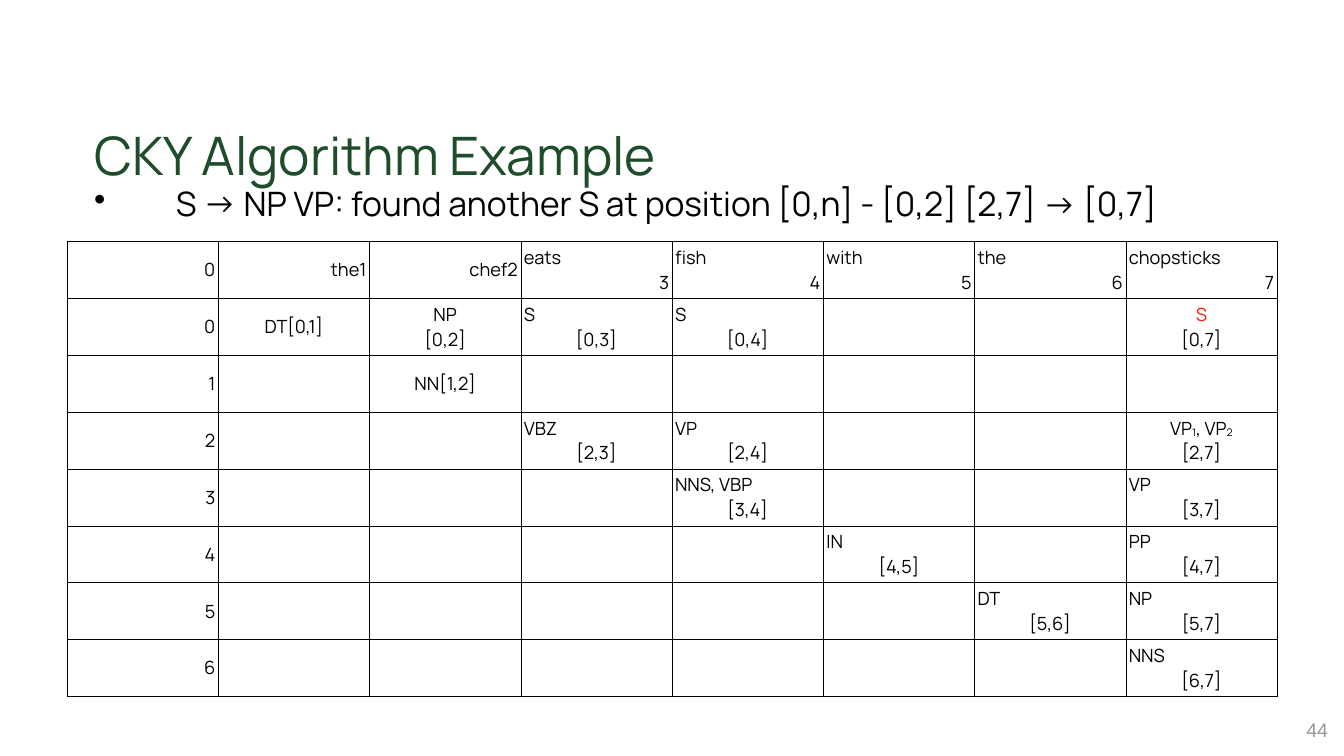
import pptx
import pptx.dml.color
import pptx.enum.text
import pptx.oxml
import pptx.oxml.ns
import pptx.util

Cm = pptx.util.Cm
Pt = pptx.util.Pt
ANCHOR = pptx.enum.text.MSO_ANCHOR
LEFT = pptx.enum.text.PP_ALIGN.LEFT
CENTER = pptx.enum.text.PP_ALIGN.CENTER
RIGHT = pptx.enum.text.PP_ALIGN.RIGHT

BLACK, GREEN, RED, GRAY = "000000", "1E4D2B", "EE230C", "99999A"
SUBSCRIPTS = {"₁": "1", "₂": "2"}

HEADERS = ["0", "the1", "chef2", "eats\n3", "fish\n4", "with\n5", "the\n6", "chopsticks\n7"]
# Symbols found for each span: (start, end) -> label
CHART = {
    (0, 1): "DT", (0, 2): "NP", (0, 3): "S", (0, 4): "S", (0, 7): "S",
    (1, 2): "NN",
    (2, 3): "VBZ", (2, 4): "VP", (2, 7): "VP₁, VP₂",
    (3, 4): "NNS, VBP", (3, 7): "VP",
    (4, 5): "IN", (4, 7): "PP",
    (5, 6): "DT", (5, 7): "NP",
    (6, 7): "NNS",
}
ONE_LINE = {(0, 1), (1, 2)}
CENTERED = {(0, 2), (0, 7), (2, 7)}
NEW_SPAN = (0, 7)


def rgb(value):
    return pptx.dml.color.RGBColor.from_string(value)


def write(para, text, size=26, color=BLACK, font="Manrope", align=LEFT):
    """Fill a paragraph, setting the subscript digits as lowered spans."""
    para.alignment = align
    pieces = [""]
    for letter in text:
        if letter in SUBSCRIPTS:
            pieces += [letter, ""]
        else:
            pieces[-1] += letter
    for piece in filter(None, pieces):
        span = para.add_run()
        span.text = SUBSCRIPTS.get(piece, piece)
        span.font.size = Pt(size)
        span.font.name = font
        span.font.color.rgb = rgb(color)
        if piece in SUBSCRIPTS:
            span.font._element.set("baseline", "-6000")


def add_text_box(page, box, inset, wrap=True, anchor=ANCHOR.TOP):
    frame = page.shapes.add_textbox(*map(Cm, box)).text_frame
    frame.word_wrap = wrap
    frame.vertical_anchor = anchor
    frame.margin_left = frame.margin_right = Cm(inset)
    frame.margin_top = frame.margin_bottom = Cm(inset)
    return frame


def add_title(page, box):
    frame = add_text_box(page, box, 0.25)
    write(frame.paragraphs[0], "CKY Algorithm Example", size=75.7, color=GREEN)


def add_rule(page, box):
    para = add_text_box(page, box, 0.25).paragraphs[0]
    para.line_spacing = 0.9
    properties = para._p.get_or_add_pPr()
    properties.set("marL", str(Cm(4.11)))
    properties.set("indent", str(-Cm(4.11)))
    bullet = pptx.oxml.ns.qn("a:buChar")
    properties.append(properties.makeelement(bullet, {"char": "•"}))
    write(para, "S → NP VP: found another S at position [0,n] - [0,2] [2,7] → [0,7]", size=48)


def add_page_number(page, box):
    frame = add_text_box(page, box, 0.13, wrap=False, anchor=ANCHOR.MIDDLE)
    write(frame.paragraphs[0], "44", size=28, color=GRAY, font="Arial", align=RIGHT)


def style_cell(cell):
    cell.fill.background()
    cell.vertical_anchor = ANCHOR.MIDDLE
    cell.margin_left = cell.margin_right = Cm(0.15)
    cell.margin_top = cell.margin_bottom = Cm(0.15)
    properties = cell._tc.get_or_add_tcPr()
    for position, side in enumerate(("lnL", "lnR", "lnT", "lnB")):
        properties.insert(position, pptx.oxml.parse_xml(
            f'<a:{side} {pptx.oxml.ns.nsdecls("a")} w="{Pt(1)}"><a:solidFill>'
            f'<a:srgbClr val="{BLACK}"/></a:solidFill></a:{side}>'))


def fill_cell(cell, text, first_align, last_align, first_color=BLACK):
    """Write one or two lines, each with its own alignment."""
    frame = cell.text_frame
    first, *rest = text.split("\n")
    write(frame.paragraphs[0], first, color=first_color,
          align=first_align if rest else last_align)
    for line in rest:
        write(frame.add_paragraph(), line, align=last_align)


def add_parse_table(page, box):
    count = len(HEADERS)
    table = page.shapes.add_table(count, count, *map(Cm, box)).table
    table.first_row = table.horz_banding = False
    for column in table.columns:
        column.width = Cm(box[2] / count)
    for row in table.rows:
        row.height = Cm(box[3] / count)
    for cell in table.iter_cells():
        style_cell(cell)

    # Words across the top, start positions down the side
    for column, header in enumerate(HEADERS):
        fill_cell(table.cell(0, column), header, LEFT, RIGHT)
    for start in range(count - 1):
        fill_cell(table.cell(start + 1, 0), str(start), LEFT, RIGHT)

    # Symbols with their spans
    for (start, end), label in CHART.items():
        place = (start, end)
        gap = "" if place in ONE_LINE else "\n"
        fill_cell(table.cell(start + 1, end), f"{label}{gap}[{start},{end}]",
                  CENTER if place in CENTERED else LEFT, CENTER,
                  first_color=RED if place == NEW_SPAN else BLACK)


def main():
    deck = pptx.Presentation()
    deck.slide_width, deck.slide_height = Cm(67.73), Cm(38.1)
    page = deck.slides.add_slide(deck.slide_layouts[6])
    add_title(page, (4.5, 5.94, 60.76, 4.27))
    add_rule(page, (4.5, 9.19, 60.76, 19.76))
    add_page_number(page, (65.66, 36.12, 1.4, 1.35))
    add_parse_table(page, (3.38, 12.17, 60.98, 22.93))
    deck.save("out.pptx")


if __name__ == "__main__":
    main()
